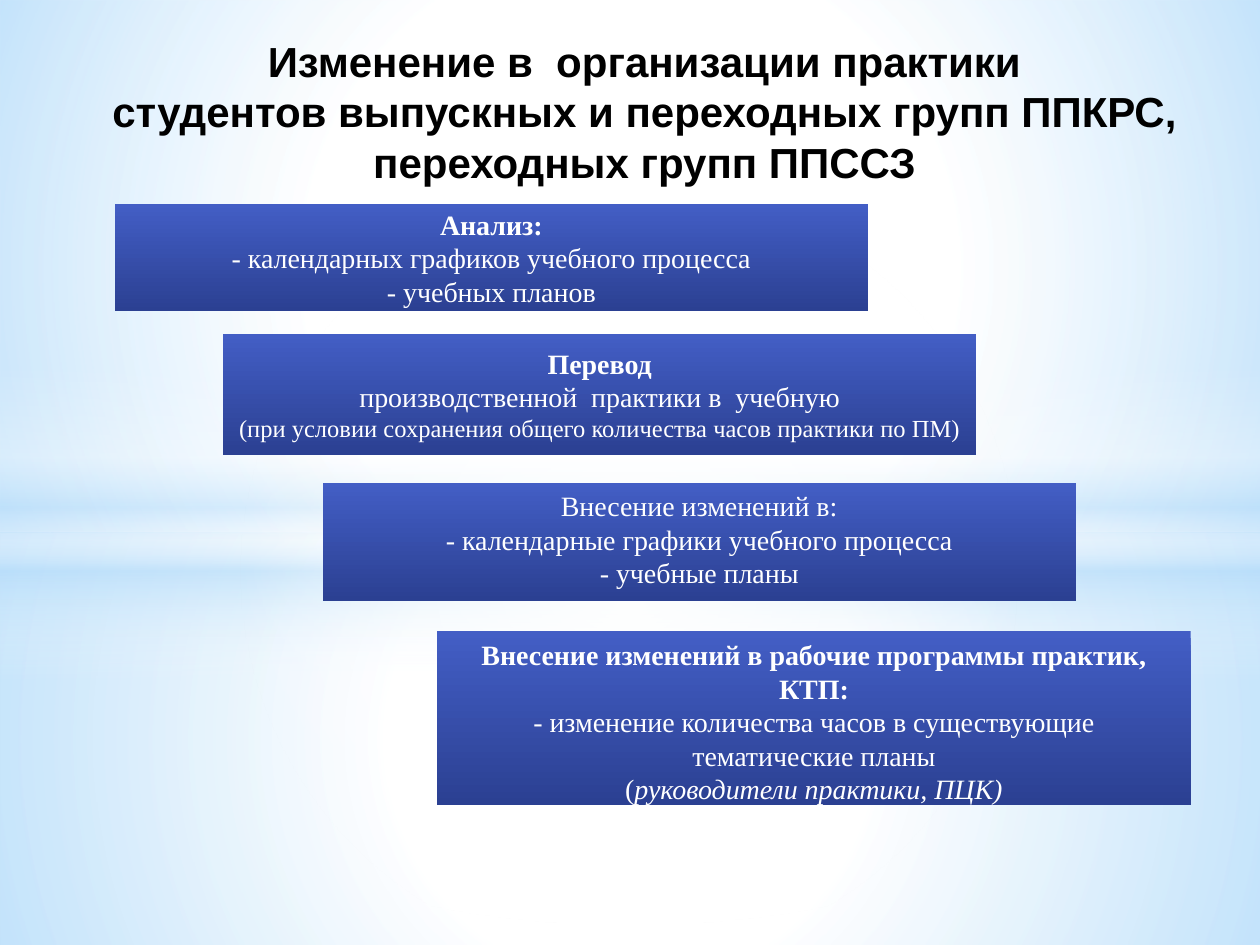
from dataclasses import dataclass

from lxml.etree import SubElement
from pptx import Presentation
from pptx.dml.color import RGBColor
from pptx.enum.shapes import MSO_SHAPE as Preset
from pptx.enum.text import MSO_ANCHOR as Anchor, MSO_AUTO_SIZE as AutoSize, PP_ALIGN as Align
from pptx.oxml.ns import qn
from pptx.util import Inches, Pt


@dataclass(frozen=True)
class Theme:
    white: str = "FFFFFF"
    black: str = "000000"
    sky: str = "B4DCFA"
    step_top: str = "435EC5"
    step_bottom: str = "2B4092"
    title_font: str = "Arial"
    body_font: str = "Times New Roman"
    title_size: int = 24
    body_size: int = 16
    note_size: int = 14


THEME = Theme()


@dataclass(frozen=True)
class Stop:
    position: int
    color: str
    opacity: int = 100


@dataclass(frozen=True)
class Glow:
    top: float
    height: float
    stops: tuple[Stop, ...]
    preset: Preset = Preset.RECTANGLE
    radial: bool = True


@dataclass(frozen=True)
class Line:
    text: str
    size: int = THEME.body_size
    bold: bool = False
    italic_tail: str = ""


@dataclass(frozen=True)
class Step:
    left: float
    top: float
    height: float
    anchor: Anchor
    lines: tuple[Line, ...]


SLIDE_WIDTH, SLIDE_HEIGHT = 10, 7.5
STEP_WIDTH = 5.98
STEP_STOPS = (Stop(0, THEME.step_top), Stop(100, THEME.step_bottom))

GLOWS = (
    Glow(4.23, 3.27, (Stop(0, THEME.white, 91), Stop(37, THEME.white, 76), Stop(100, THEME.sky, 79))),
    Glow(0, 4.23, (Stop(0, THEME.white, 89), Stop(48, THEME.white, 62), Stop(100, THEME.sky, 79))),
    Glow(2.9, 2.5, (
        Stop(0, THEME.white, 0), Stop(29, THEME.white, 30), Stop(45, THEME.sky, 40),
        Stop(55, THEME.white, 26), Stop(65, THEME.sky, 60), Stop(100, THEME.white, 0),
    ), radial=False),
    Glow(1.75, 5.58, (Stop(0, THEME.white), Stop(54, THEME.white, 0)), Preset.OVAL),
)

TITLE = (
    "Изменение в  организации практики\n"
    "студентов выпускных и переходных групп ППКРС, переходных групп ППССЗ"
)

STEPS = (
    Step(0.91, 1.62, 0.85, Anchor.MIDDLE, (
        Line("Анализ:", bold=True),
        Line("- календарных графиков учебного процесса"),
        Line("- учебных планов"),
    )),
    Step(1.77, 2.65, 0.96, Anchor.MIDDLE, (
        Line("Перевод", bold=True),
        Line("производственной  практики в  учебную"),
        Line("(при условии сохранения общего количества часов практики по ПМ)", THEME.note_size),
    )),
    Step(2.56, 3.83, 0.94, Anchor.TOP, (
        Line("Внесение изменений в:"),
        Line("- календарные графики учебного процесса"),
        Line("- учебные планы"),
    )),
    Step(3.47, 5.01, 1.38, Anchor.TOP, (
        Line("Внесение изменений в рабочие программы практик, КТП:", bold=True),
        Line("- изменение количества часов в существующие тематические планы"),
        Line("(", italic_tail="руководители практики, ПЦК)"),
    )),
)


def fill_gradient(shape, stops: tuple[Stop, ...], radial: bool = False) -> None:
    shape.fill.gradient()
    gradient = shape.element.spPr.find(qn("a:gradFill"))
    for child in list(gradient):
        gradient.remove(child)
    stop_list = SubElement(gradient, qn("a:gsLst"))
    for stop in stops:
        mark = SubElement(stop_list, qn("a:gs"), pos=str(stop.position * 1000))
        color = SubElement(mark, qn("a:srgbClr"), val=stop.color)
        if stop.opacity < 100:
            SubElement(color, qn("a:alpha"), val=str(stop.opacity * 1000))
    if radial:
        circle = SubElement(gradient, qn("a:path"), {"path": "circle"})
        SubElement(circle, qn("a:fillToRect"), dict.fromkeys("ltrb", "50000"))
    else:
        SubElement(gradient, qn("a:lin"), ang="5400000", scaled="0")


def add_panel(slide, preset: Preset, left: float, top: float, width: float, height: float,
              stops: tuple[Stop, ...], radial: bool = False):
    panel = slide.shapes.add_shape(preset, Inches(left), Inches(top), Inches(width), Inches(height))
    panel.shadow.inherit = False
    panel.line.fill.background()
    fill_gradient(panel, stops, radial)
    return panel


def style_run(run, font: str, size: int, color: str, bold: bool = False, italic: bool = False) -> None:
    run.font.name = font
    run.font.size = Pt(size)
    run.font.color.rgb = RGBColor.from_string(color)
    run.font.bold = bold
    run.font.italic = italic


def add_step(slide, step: Step) -> None:
    panel = add_panel(slide, Preset.RECTANGLE, step.left, step.top, STEP_WIDTH, step.height, STEP_STOPS)
    frame = panel.text_frame
    frame.word_wrap = True
    frame.vertical_anchor = step.anchor
    frame.text = "\n".join(line.text for line in step.lines)
    for paragraph, line in zip(frame.paragraphs, step.lines):
        paragraph.alignment = Align.CENTER
        style_run(paragraph.runs[0], THEME.body_font, line.size, THEME.white, line.bold)
        if line.italic_tail:
            tail = paragraph.add_run()
            tail.text = line.italic_tail
            style_run(tail, THEME.body_font, line.size, THEME.white, italic=True)


def place_title(slide) -> None:
    title = slide.shapes.title
    title.element.getparent().append(title.element)
    title.left, title.top = Inches(0.78), Inches(0.23)
    title.width, title.height = Inches(8.67), Inches(1.31)
    frame = title.text_frame
    frame.text = TITLE
    frame.word_wrap = True
    frame.auto_size = AutoSize.NONE
    frame.vertical_anchor = Anchor.TOP
    for paragraph in frame.paragraphs:
        paragraph.alignment = Align.CENTER
        style_run(paragraph.runs[0], THEME.title_font, THEME.title_size, THEME.black, bold=True)


def main() -> None:
    deck = Presentation()
    deck.slide_width, deck.slide_height = Inches(SLIDE_WIDTH), Inches(SLIDE_HEIGHT)
    slide = deck.slides.add_slide(deck.slide_layouts[5])
    for glow in GLOWS:
        add_panel(slide, glow.preset, 0, glow.top, SLIDE_WIDTH, glow.height, glow.stops, glow.radial)
    place_title(slide)
    for step in STEPS:
        add_step(slide, step)
    deck.save("out.pptx")


if __name__ == "__main__":
    main()
